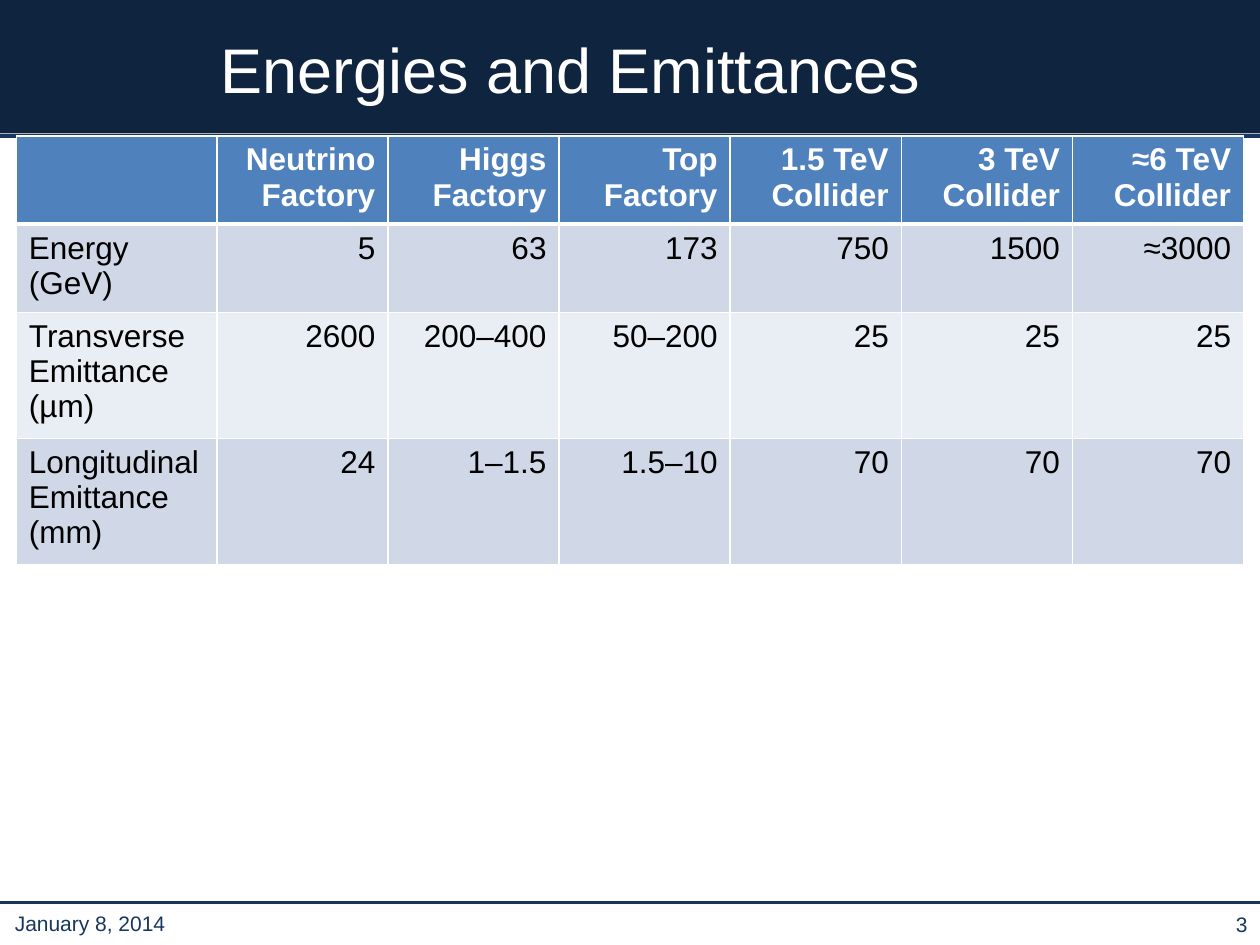
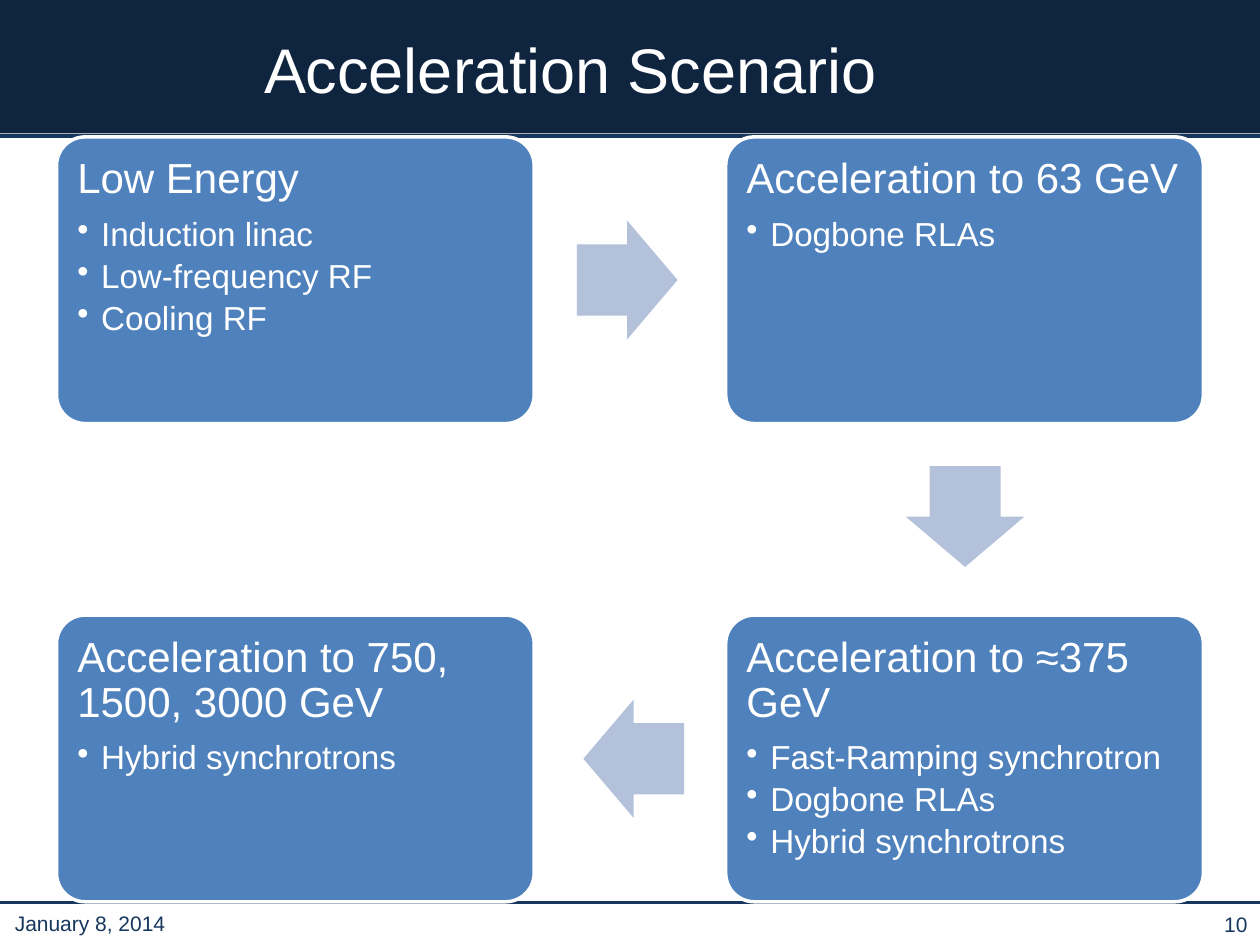
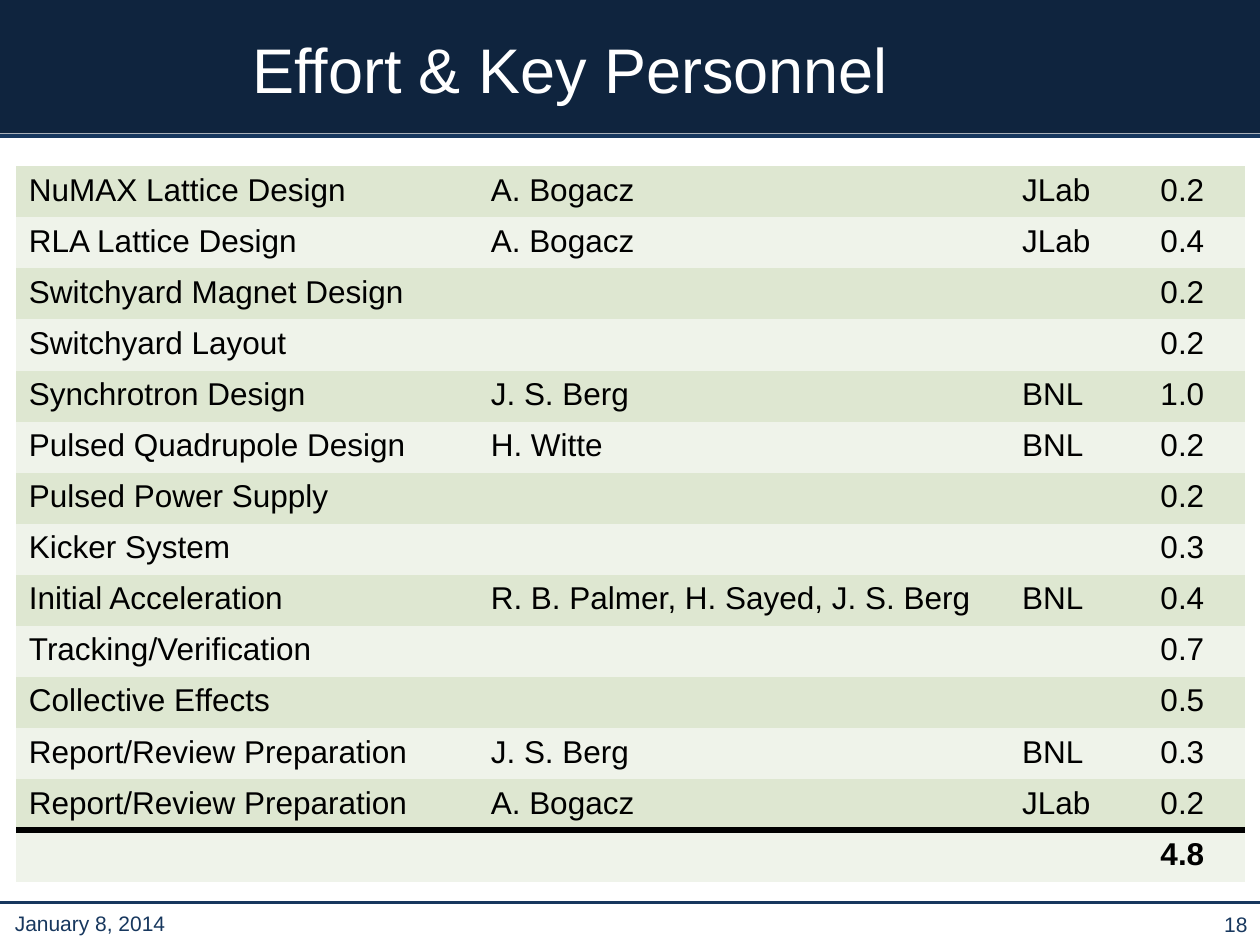
import pptx
import pptx.util
import pptx.dml.color
import pptx.enum.shapes
import pptx.enum.text
import pptx.oxml
import pptx.oxml.ns

Cm, Pt = pptx.util.Cm, pptx.util.Pt
SHAPE = pptx.enum.shapes.MSO_SHAPE
ALIGN = pptx.enum.text.PP_ALIGN
ANCHOR = pptx.enum.text.MSO_ANCHOR
qn = pptx.oxml.ns.qn

NAVY, BLUE, PALE_BLUE = "0F243E", "17375E", "B3C1DB"
BOX_BLUE, WHITE, BLACK = "4F81BD", "FFFFFF", "000000"
BLUE_BANDS = ["D0D8E8", "E9EDF4"]
GREEN_BANDS = ["DEE7D1", "EFF3EA"]
NO_STYLE = "{2D5ABB26-0587-4C30-8999-92F81FD0307C}"
DATE = "January 8, 2014"


def rgb(color):
    return pptx.dml.color.RGBColor.from_string(color)


def element(tag, **attrs):
    el = pptx.oxml.parse_xml(
        f'<a:{tag} xmlns:a="http://schemas.openxmlformats.org/drawingml/2006/main"/>')
    for key, value in attrs.items():
        el.set(key, str(value))
    return el


class Deck:
    font = "Arial"

    def __init__(self):
        self.prs = pptx.Presentation()
        self.prs.slide_width, self.prs.slide_height = Cm(25.4), Cm(19.05)
        self.s = None

    def slide(self, title, number):
        self.s = self.prs.slides.add_slide(self.prs.slide_layouts[6])
        self.shape(SHAPE.RECTANGLE, (0, 0, 25.4, 2.69), NAVY)
        for y in (2.74, 18.19):
            self.line(0, y, 25.4, y)
        self.text(title, (0.03, 0, 22.94, 2.74), 36, WHITE, ALIGN.CENTER)
        self.text(DATE, (0.05, 18.21, 4.83, 0.79), 12, BLUE, ALIGN.LEFT)
        self.text(str(number), (20.57, 18.21, 4.83, 0.84), 12, BLUE, ALIGN.RIGHT)

    def shape(self, kind, box, fill, line=None, adjustments=(), rotation=0):
        sp = self.s.shapes.add_shape(kind, *map(Cm, box))
        sp.shadow.inherit = False
        sp.rotation = rotation
        sp.fill.solid()
        sp.fill.fore_color.rgb = rgb(fill)
        if line:
            sp.line.color.rgb = rgb(line)
            sp.line.width = Pt(2)
        else:
            sp.line.fill.background()
        for i, value in enumerate(adjustments):
            sp.adjustments[i] = value
        return sp

    def line(self, x1, y1, x2, y2):
        cn = self.s.shapes.add_connector(
            pptx.enum.shapes.MSO_CONNECTOR.STRAIGHT, *map(Cm, (x1, y1, x2, y2)))
        cn.line.color.rgb = rgb(BLUE)
        cn.line.width = Pt(2)
        cn._element.spPr.append(element("effectLst"))

    def run(self, p, text, size, color, bold=False, **formats):
        for key, value in formats.items():
            setattr(p, key, value)
        r = p.add_run()
        r.text = text
        for key, value in {"name": self.font, "size": Pt(size), "bold": bold}.items():
            setattr(r.font, key, value)
        r.font.color.rgb = rgb(color)

    def text(self, text, box, size, color, align):
        tf = self.s.shapes.add_textbox(*map(Cm, box)).text_frame
        tf.word_wrap = True
        tf.vertical_anchor = ANCHOR.MIDDLE
        self.run(tf.paragraphs[0], text, size, color, alignment=align)

    def stage(self, x, y, heading, bullets):
        sp = self.shape(SHAPE.ROUNDED_RECTANGLE, (x, y, 9.63, 5.78), BOX_BLUE, WHITE, [0.1])
        tf = sp.text_frame
        tf.word_wrap = True
        tf.vertical_anchor = ANCHOR.TOP
        for side in ("left", "top", "right", "bottom"):
            setattr(tf, f"margin_{side}", Cm(0.25))
        layout = {"alignment": ALIGN.LEFT, "line_spacing": 0.9}
        self.run(tf.paragraphs[0], heading, 24, WHITE, space_after=Pt(8.4), **layout)
        for bullet in bullets:
            p = tf.add_paragraph()
            pPr = p._p.get_or_add_pPr()
            pPr.set("marL", str(Cm(0.48)))
            pPr.set("indent", str(-Cm(0.48)))
            pPr.append(element("buChar", char="•"))
            self.run(p, bullet, 19, WHITE, space_after=Pt(3.4), **layout)

    def arrow(self, x, y, rotation):
        self.shape(SHAPE.RIGHT_ARROW, (x, y, 2.03, 2.39), PALE_BLUE,
                   adjustments=[0.6, 0.5], rotation=rotation)

    def table(self, x, y, widths, heights, rows):
        frame = self.s.shapes.add_table(len(rows), len(widths), Cm(x), Cm(y),
                                        Cm(sum(widths)), Cm(sum(heights)))
        t = frame.table
        t.first_row = t.horz_banding = False
        next(frame._element.iter(qn("a:tableStyleId"))).text = NO_STYLE
        for column, width in zip(t.columns, widths):
            column.width = Cm(width)
        for row, height in zip(t.rows, heights):
            row.height = Cm(height)
        for i, row in enumerate(rows):
            for j, text in enumerate(row):
                yield i, j, t.cell(i, j), text

    def cell(self, cell, text, fill, color=BLACK, bold=False, align=ALIGN.LEFT, borders=None):
        cell.fill.solid()
        cell.fill.fore_color.rgb = rgb(fill)
        if text:
            self.run(cell.text_frame.paragraphs[0], text, 18, color, bold, alignment=align)
        tcPr = cell._tc.get_or_add_tcPr()
        for i, (side, (line_color, width)) in enumerate((borders or {}).items()):
            ln = element(f"ln{side}", w=Pt(width))
            solid = element("solidFill")
            solid.append(element("srgbClr", val=line_color))
            ln.append(solid)
            tcPr.insert(i, ln)


def energies(deck):
    deck.slide("Energies and Emittances", 3)
    rows = [
        ["", "Neutrino Factory", "Higgs Factory", "Top Factory",
         "1.5 TeV Collider", "3 TeV Collider", "≈6 TeV Collider"],
        ["Energy (GeV)", "5", "63", "173", "750", "1500", "≈3000"],
        ["Transverse Emittance (µm)", "2600", "200–400", "50–200", "25", "25", "25"],
        ["Longitudinal Emittance (mm)", "24", "1–1.5", "1.5–10", "70", "70", "70"],
    ]
    widths = [4.04] + [3.45] * 6
    for i, j, cell, text in deck.table(0.33, 2.74, widths, [1.67, 1.67, 2.4, 2.4], rows):
        header = i == 0
        borders = {side: (WHITE, 1) for side in "LRTB"}
        if header:
            borders["B"] = (WHITE, 3)
        if i == 1:
            borders["T"] = (WHITE, 3)
        deck.cell(cell, text, BOX_BLUE if header else BLUE_BANDS[(i - 1) % 2],
                  WHITE if header else BLACK, header,
                  ALIGN.RIGHT if j else ALIGN.LEFT, borders)


def scenario(deck):
    deck.slide("Acceleration Scenario", 10)
    left, right, top, bottom = 1.14, 14.63, 2.76, 12.4
    deck.stage(left, top, "Low Energy", ["Induction linac", "Low-frequency RF", "Cooling RF"])
    deck.arrow(11.63, 4.45, 0)
    deck.stage(right, top, "Acceleration to 63 GeV", ["Dogbone RLAs"])
    deck.arrow(18.44, 9.22, 90)
    deck.stage(right, bottom, "Acceleration to ≈375 GeV",
               ["Fast-Ramping synchrotron", "Dogbone RLAs", "Hybrid synchrotrons"])
    deck.arrow(11.76, 14.1, 180)
    deck.stage(left, bottom, "Acceleration to 750, 1500, 3000 GeV", ["Hybrid synchrotrons"])


def personnel(deck):
    deck.slide("Effort & Key Personnel", 18)
    rows = [
        ["NuMAX Lattice Design", "A. Bogacz", "JLab", "0.2"],
        ["RLA Lattice Design", "A. Bogacz", "JLab", "0.4"],
        ["Switchyard Magnet Design", "", "", "0.2"],
        ["Switchyard Layout", "", "", "0.2"],
        ["Synchrotron Design", "J. S. Berg", "BNL", "1.0"],
        ["Pulsed Quadrupole Design", "H. Witte", "BNL", "0.2"],
        ["Pulsed Power Supply", "", "", "0.2"],
        ["Kicker System", "", "", "0.3"],
        ["Initial Acceleration", "R. B. Palmer, H. Sayed, J. S. Berg", "BNL", "0.4"],
        ["Tracking/Verification", "", "", "0.7"],
        ["Collective Effects", "", "", "0.5"],
        ["Report/Review Preparation", "J. S. Berg", "BNL", "0.3"],
        ["Report/Review Preparation", "A. Bogacz", "JLab", "0.2"],
        ["", "", "", "4.8"],
    ]
    widths = [9.31, 10.71, 2.79, 1.96]
    for i, j, cell, text in deck.table(0.33, 3.35, widths, [1.03] * len(rows), rows):
        total = i == len(rows) - 1
        deck.cell(cell, text, GREEN_BANDS[i % 2], bold=total,
                  borders={"T": (BLACK, 4)} if total else None)


def main():
    deck = Deck()
    energies(deck)
    scenario(deck)
    personnel(deck)
    deck.prs.save("out.pptx")


if __name__ == "__main__":
    main()
